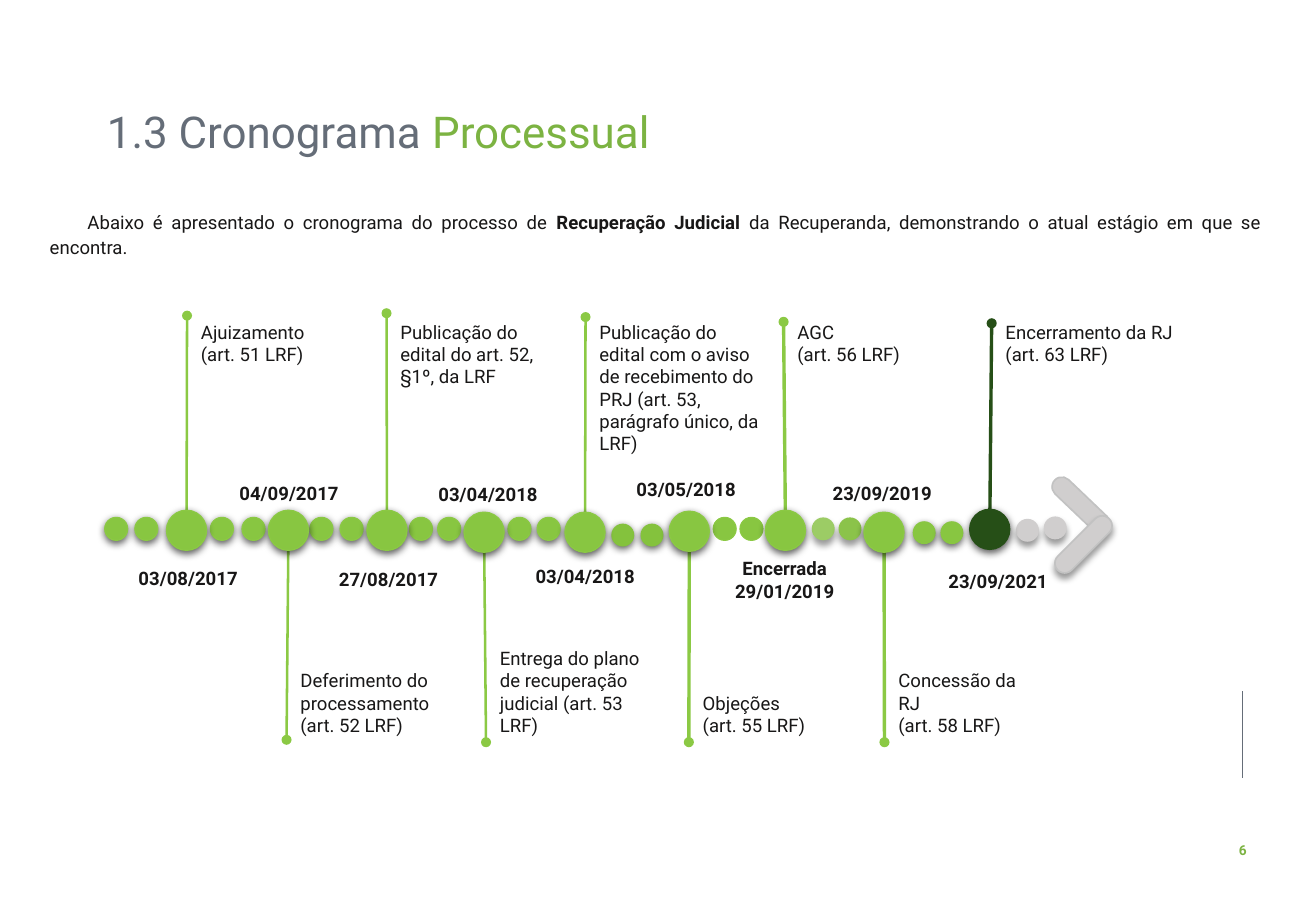
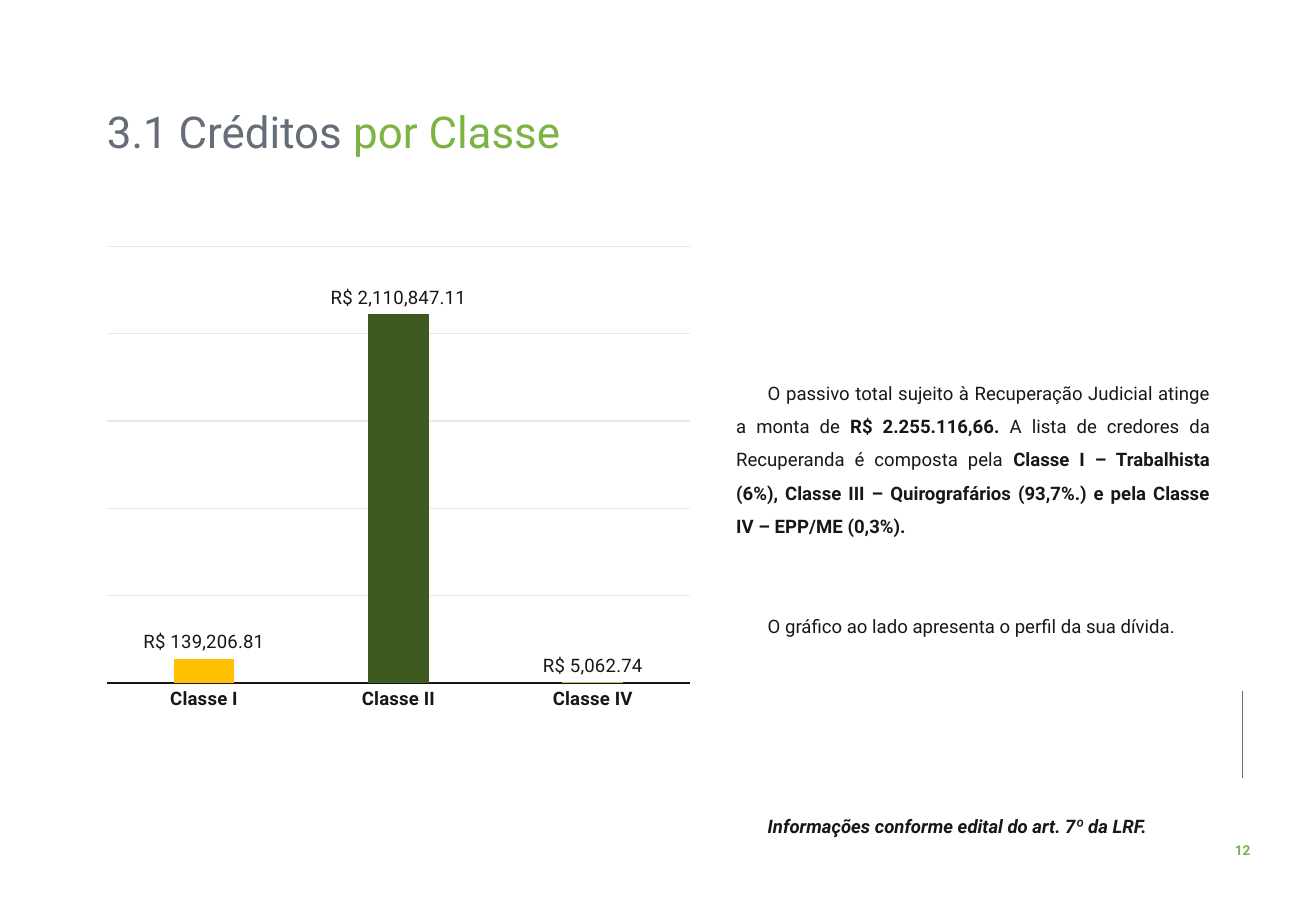
from lxml.etree import SubElement
from pptx import Presentation
from pptx.chart.data import CategoryChartData
from pptx.dml.color import RGBColor
from pptx.enum.chart import XL_CHART_TYPE as Kind, XL_LABEL_POSITION as Spot, XL_TICK_MARK as Tick
from pptx.enum.shapes import MSO_CONNECTOR as Link, MSO_SHAPE as Form
from pptx.enum.text import MSO_ANCHOR as Anchor, MSO_AUTO_SIZE as Fit, PP_ALIGN as Align
from pptx.oxml.ns import qn
from pptx.util import Cm, Pt

# Shared look
FONT = "Roboto"
INK, SLATE, GREEN = "181717", "656D78", "7CB342"
LEAF, EDGE, DARK, GREY = "88C641", "8BC944", "264F17", "D0CECE"
HARD, SOFT = (63, 4.5, 1.5), (40, 4, 3)  # shadow: opacity %, blur, distance

# Timeline: dot x, y; pin tip x, y; date, its x, top; label, its lines, width
EVENTS = [
    (3.9, 11.09, 3.91, 6.6, "03/08/2017", 3.94, 11.73,
     "Ajuizamento (art. 51 LRF)", 2, 2.82),
    (6.03, 11.09, 5.99, 15.47, "04/09/2017", 6.05, 9.96,
     "Deferimento do processamento (art. 52 LRF)", 3, 3.48),
    (8.09, 11.09, 8.08, 6.55, "27/08/2017", 8.13, 11.76,
     "Publicação do edital do art. 52, §1º, da LRF", 3, 3.3),
    (10.12, 11.13, 10.16, 15.52, "03/04/2018", 10.21, 9.98,
     "Entrega do plano de recuperação judicial (art. 53 LRF)", 4, 3.56),
    (12.23, 11.13, 12.24, 6.63, "03/04/2018", 12.24, 11.68,
     "Publicação do edital com o aviso de recebimento do PRJ (art. 53, "
     "parágrafo único, da LRF)", 6, 3.96),
    (14.41, 11.11, 14.4, 15.52, "03/05/2018", 14.35, 9.86,
     "Objeções\n(art. 55 LRF)", 2, 2.79),
    (16.42, 11.09, 16.38, 6.73, "Encerrada\n29/01/2019", 16.41, 11.53,
     "AGC\n(art. 56 LRF)", 2, 2.79),
    (18.48, 11.13, 18.49, 15.52, "23/09/2019", 18.45, 9.96,
     "Concessão da RJ\n(art. 58 LRF)", 3, 3.38),
    (20.69, 11.07, 20.73, 6.76, "23/09/2021", 20.87, 11.79,
     "Encerramento da RJ\n(art. 63 LRF)", 2, 4.01),
]
# Small dots: centres, y, fill, line, shadow
BEADS = [
    ([2.43, 3.06, 4.64, 5.3, 6.72, 7.35, 8.8, 9.39, 10.86, 11.47],
     11.06, LEAF, EDGE, HARD),
    ([13.02, 13.63], 11.19, "84C23D", None, HARD),
    ([15.15, 15.71], 11.06, LEAF, EDGE, None),
    ([17.21], 11.06, "9CCC65", None, SOFT),
    ([17.77], 11.06, "8BC34A", None, SOFT),
    ([19.32, 19.9], 11.14, LEAF, None, HARD),
    ([21.48], 11.09, GREY, None, SOFT),
    ([22.06], 11.04, GREY, None, SOFT),
]
# Arrow bars: left, top, turn, shadow
BARS = [(21.84, 10.36, 43.7, None), (21.89, 11.18, 315, SOFT)]

INTRO = [[("Abaixo é apresentado o cronograma do processo de ", ""),
          ("Recuperação Judicial ", "b"),
          ("da Recuperanda, demonstrando o atual estágio em que se encontra.", "")]]
DEBT = [
    [("O passivo total sujeito à Recuperação Judicial atinge a monta de ", ""),
     ("R$ 2.255.116,66. ", "b"),
     ("A lista de credores da Recuperanda é composta pela ", ""),
     ("Classe I – Trabalhista (6%), Classe III – Quirografários (93,7%.) "
      "e pela Classe IV – EPP/ME (0,3%).", "b")],
    [("O gráfico ao lado apresenta o perfil da sua dívida.", "")],
    [("Informações conforme edital do art. 7º da LRF.", "bi")],
]
CLASSES = [("Classe I", 139206.81, "FFC000"),
           ("Classe II", 2110847.11, "3E5A21"),
           ("Classe IV", 5062.74, "9CCC65")]


def rgb(code):
    return RGBColor.from_string(code)


def style(font, size, color, bold=False):
    font.name, font.size, font.bold = FONT, Pt(size), bold
    font.color.rgb = rgb(color)


def write(frame, paras, size=11, color=INK, align=Align.LEFT, space=None,
          indent=0, gaps=(), anchor=Anchor.TOP, wrap=True):
    """Paragraphs are lists of (text, style letters) pairs."""
    frame.word_wrap, frame.auto_size = wrap, Fit.NONE
    frame.vertical_anchor = anchor
    for i, runs in enumerate(paras):
        para = frame.add_paragraph() if i else frame.paragraphs[0]
        para.alignment, para.line_spacing = align, space
        if indent:
            para._p.get_or_add_pPr().set("indent", str(Cm(indent)))
        if i and gaps:
            para.space_before = Pt(gaps[i - 1])
        for text, marks in runs:
            run = para.add_run()
            run.text = text
            style(run.font, size, color, "b" in marks)
            run.font.italic = "i" in marks


def plain(text, marks=""):
    return [[(line, marks)] for line in text.split("\n")]


def label(slide, x, y, w, h, paras, **look):
    box = slide.shapes.add_textbox(Cm(x), Cm(y), Cm(w), Cm(h))
    write(box.text_frame, paras, **look)


def rule(slide, x1, y1, x2, y2, color, width, oval=False):
    line = slide.shapes.add_connector(Link.STRAIGHT, Cm(x1), Cm(y1), Cm(x2), Cm(y2))
    line.line.color.rgb, line.line.width = rgb(color), Pt(width)
    props = line._element.spPr
    if oval:
        SubElement(props.find(qn("a:ln")), qn("a:tailEnd"), type="oval")
    SubElement(props, qn("a:effectLst"))


def solid(slide, form, x, y, w, h, fill, edge=None, shade=None, width=0.75):
    part = slide.shapes.add_shape(form, Cm(x), Cm(y), Cm(w), Cm(h))
    part.fill.solid()
    part.fill.fore_color.rgb = rgb(fill)
    if edge:
        part.line.color.rgb, part.line.width = rgb(edge), Pt(width)
    else:
        part.line.fill.background()
    part.shadow.inherit = False
    if shade:
        alpha, blur, dist = shade
        outer = SubElement(part._element.spPr.find(qn("a:effectLst")), qn("a:outerShdw"),
                           blurRad=str(Pt(blur)), dist=str(Pt(dist)),
                           dir="5400000", algn="t", rotWithShape="0")
        tint = SubElement(outer, qn("a:srgbClr"), val="000000")
        SubElement(tint, qn("a:alpha"), val=str(alpha * 1000))
    return part


def dot(slide, x, y, size, *look):
    solid(slide, Form.OVAL, x - size / 2, y - size / 2, size, size, *look)


def start(deck, head, tail, page):
    """New slide with title, side rule and page number."""
    slide = deck.slides.add_slide(deck.slide_layouts[5])
    title = slide.shapes.title
    title.left, title.top, title.width, title.height = Cm(1.98), Cm(2.18), Cm(20.78), Cm(1.35)
    write(title.text_frame, [[(head, ""), (tail, "")]], 26, SLATE, space=0.9)
    title.text_frame.paragraphs[0].runs[1].font.color.rgb = rgb(GREEN)
    rule(slide, 25.98, 14.45, 25.98, 16.26, SLATE, 0.5)
    label(slide, 25.55, 17.48, 0.86, 0.61, plain(page, "b"), size=8.1,
          color=GREEN, align=Align.CENTER, wrap=False)
    return slide


def timeline(deck):
    slide = start(deck, "1.3 Cronograma ", "Processual", "6")
    label(slide, 0.79, 4.22, 25.83, 1.3, INTRO, align=Align.JUSTIFY,
          space=1.14, indent=0.79)
    last = len(EVENTS) - 1

    # Pins, labels and dates
    for i, (x, y, tx, ty, date, dx, dy, text, lines, w) in enumerate(EVENTS):
        up = i % 2 == 0
        rule(slide, x, y, tx, ty, DARK if i == last else EDGE, 1.5 if i < 5 else 2, True)
        h = 0.25 + 0.47 * lines
        label(slide, tx + 0.04, 6.58 if up else 15.52 - h, w, h, plain(text),
              anchor=Anchor.TOP if up else Anchor.BOTTOM)
        label(slide, dx - 1.63, dy, 3.25, 0.27 + 0.47 * len(date.split("\n")),
              plain(date, "b"), align=Align.CENTER)

    # Dots and arrow
    for xs, y, *look in BEADS:
        for x in xs:
            dot(slide, x, y, 0.48, *look)
    for x, y, turn, shade in BARS:
        bar = solid(slide, Form.ROUNDED_RECTANGLE, x, y, 1.52, 0.41, GREY, "C2C2C2", shade, 1)
        bar.adjustments[0], bar.rotation = 0.5, turn
    for i, (x, y, *_) in enumerate(EVENTS):
        look = (DARK, DARK) if i == last else (LEAF, EDGE)
        dot(slide, x, y, 0.84, *look, HARD)


def credits(deck):
    slide = start(deck, "3.1 Créditos ", "por Classe", "12")
    label(slide, 15.14, 7.62, 10.41, 9.35, DEBT, align=Align.JUSTIFY,
          space=1.5, indent=0.66, gaps=(39.5, 98.7))

    # Column chart
    data = CategoryChartData(number_format="#,##0.00")
    data.categories = [name for name, *_ in CLASSES]
    data.add_series("Series 1", [value for _, value, _ in CLASSES])
    chart = slide.shapes.add_chart(Kind.COLUMN_CLUSTERED, Cm(1.98), Cm(4.95),
                                   Cm(12.7), Cm(10.11), data).chart
    chart.has_legend = chart.has_title = False
    style(chart.font, 11, SLATE)

    cats, vals = chart.category_axis, chart.value_axis
    cats.major_tick_mark = cats.minor_tick_mark = Tick.NONE
    style(cats.tick_labels.font, 11, INK, True)
    vals.visible, vals.has_major_gridlines = False, True
    vals.minimum_scale, vals.maximum_scale, vals.major_unit = 0, 2500000, 500000
    for line, color in ((cats.format.line, INK), (vals.major_gridlines.format.line, "E7E9EB")):
        line.color.rgb, line.width = rgb(color), Pt(0.75)

    plot = chart.plots[0]
    plot.gap_width, plot.overlap, plot.vary_by_categories = 219, -27, False
    bars = plot.series[0]
    for i, (_, _, color) in enumerate(CLASSES):
        fill = bars.points[i].format.fill
        fill.solid()
        fill.fore_color.rgb = rgb(color)
    tags = bars.data_labels
    tags.show_value, tags.position = True, Spot.OUTSIDE_END
    tags.number_format, tags.number_format_is_linked = '"R$"\\ #,##0.00', False
    style(tags.font, 11, INK)


def main():
    deck = Presentation()
    deck.slide_width, deck.slide_height = Cm(27.51), Cm(19.05)
    timeline(deck)
    credits(deck)
    deck.save("out.pptx")


if __name__ == "__main__":
    main()
